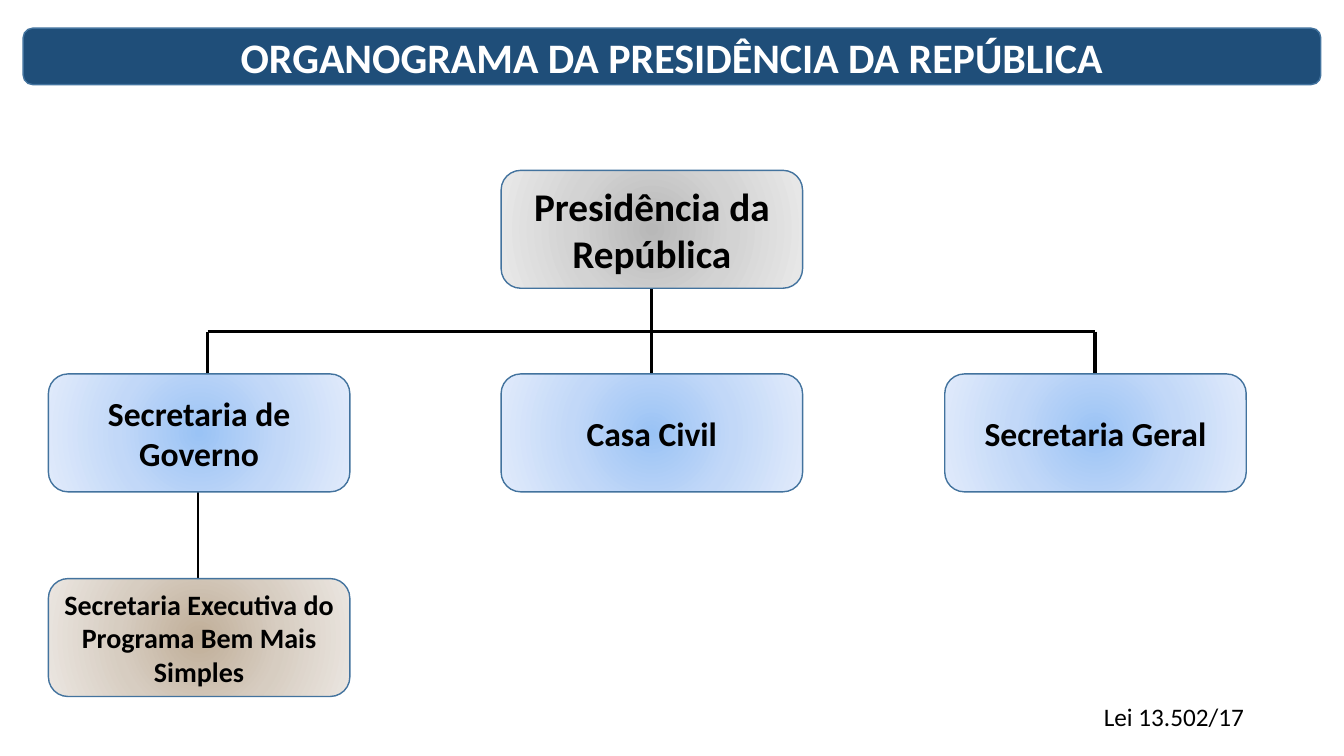
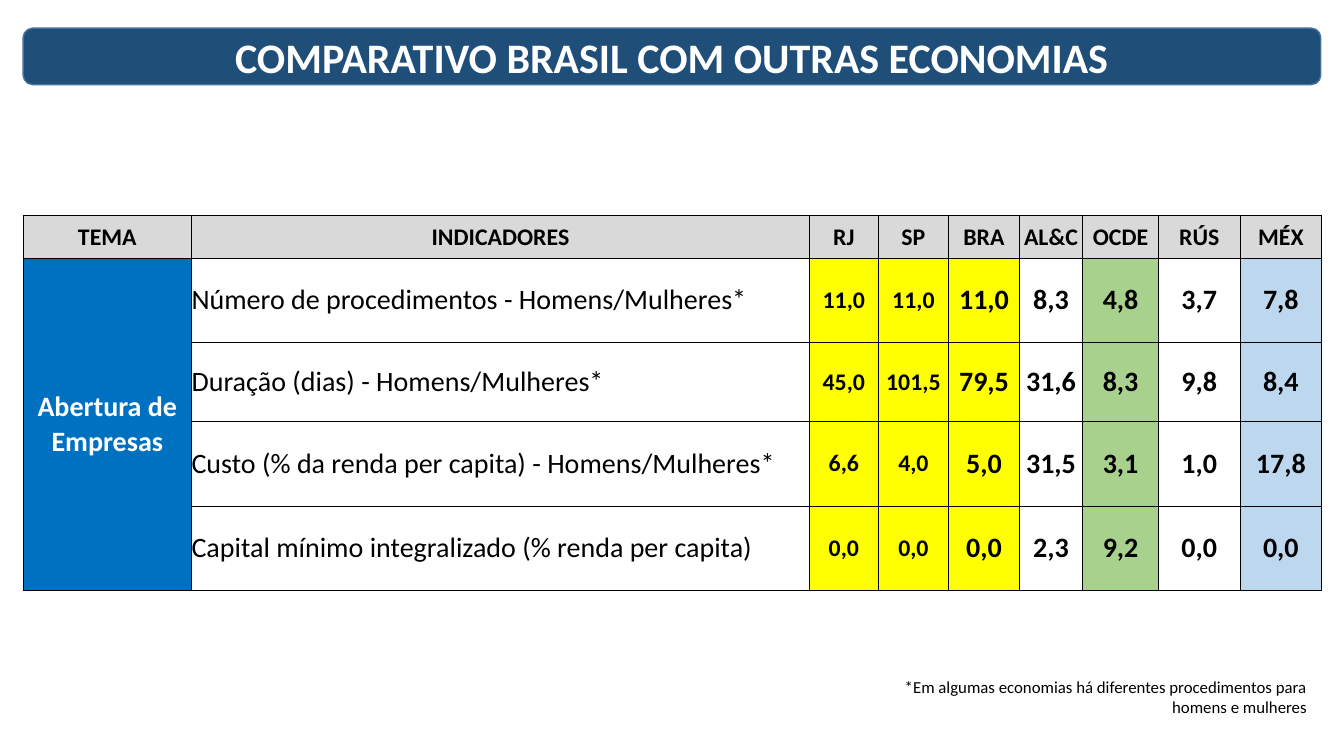
from dataclasses import dataclass

from pptx import Presentation
from pptx.dml.color import RGBColor
from pptx.enum.shapes import MSO_CONNECTOR, MSO_SHAPE
from pptx.enum.text import MSO_ANCHOR, MSO_AUTO_SIZE, PP_ALIGN
from pptx.oxml import parse_xml
from pptx.oxml.ns import nsdecls, qn
from pptx.util import Inches, Pt

ROUND_RECT = MSO_SHAPE.ROUNDED_RECTANGLE
STRAIGHT = MSO_CONNECTOR.STRAIGHT
MIDDLE = MSO_ANCHOR.MIDDLE
LEFT, CENTER, RIGHT = PP_ALIGN.LEFT, PP_ALIGN.CENTER, PP_ALIGN.RIGHT
TITLE_ONLY = 5


@dataclass(frozen=True)
class Theme:
    font: str = "Calibri"
    black: str = "000000"
    white: str = "FFFFFF"
    band: str = "1F4E79"
    outline: str = "43739E"
    header: str = "D9D9D9"
    topic: str = "0070C0"
    yellow: str = "FFFF00"
    green: str = "A9D18E"
    pale_blue: str = "BDD7EE"
    gray_glow: tuple[str, ...] = ("B8B8B8", "D3D3D3", "E9E9E9")
    blue_glow: tuple[str, ...] = ("9AC3F5", "C2D8F8", "E1EBFB")
    brown_glow: tuple[str, ...] = ("C0AE98", "D7CDC1", "EBE6E1")
    title: int = 30
    root: int = 28
    office: int = 24
    unit: int = 20
    law: int = 18
    small_cell: int = 17
    cell: int = 20
    note: int = 12


T = Theme()
BAND = (0.23, 0.28, 12.87, 0.56)
BOX_W, BOX_H = 2.99, 1.17


@dataclass(frozen=True)
class Node:
    text: str
    x: float
    y: float
    size: int
    glow: tuple[str, ...]


@dataclass(frozen=True)
class Link:
    x1: float
    y1: float
    x2: float
    y2: float
    width: float = 2.25


@dataclass(frozen=True)
class Column:
    head: str
    width: float
    size: int = T.cell
    fill: str | None = None
    bold: bool = True
    align: PP_ALIGN = CENTER


ROOT_Y, OFFICE_Y, UNIT_Y, BUS_Y = 1.69, 3.71, 5.74, 3.29
LEFT_X, MID_X, RIGHT_X = 0.48, 4.97, 9.37
LEFT_DROP, MID_DROP, RIGHT_DROP = 2.06, 6.46, 10.86

NODES = [
    Node("Presidência da República", MID_X, ROOT_Y, T.root, T.gray_glow),
    Node("Secretaria de Governo", LEFT_X, OFFICE_Y, T.office, T.blue_glow),
    Node("Casa Civil", MID_X, OFFICE_Y, T.office, T.blue_glow),
    Node("Secretaria Geral", RIGHT_X, OFFICE_Y, T.office, T.blue_glow),
    Node("Secretaria Executiva do Programa Bem Mais Simples",
         LEFT_X, UNIT_Y, T.unit, T.brown_glow),
]
LINKS = [
    Link(MID_DROP, ROOT_Y + BOX_H, MID_DROP, OFFICE_Y),
    Link(LEFT_DROP, BUS_Y, RIGHT_DROP, BUS_Y),
    Link(LEFT_DROP, BUS_Y, LEFT_DROP, OFFICE_Y),
    Link(RIGHT_DROP, BUS_Y, RIGHT_DROP, OFFICE_Y),
    Link(1.96, OFFICE_Y + BOX_H, 1.96, UNIT_Y, 1.5),
]

COLUMNS = [
    Column("TEMA", 1.67, fill=T.topic),
    Column("INDICADORES", 6.13, bold=False, align=LEFT),
    Column("RJ", 0.68, T.small_cell, T.yellow),
    Column("SP", 0.7, T.small_cell, T.yellow),
    Column("BRA", 0.7, fill=T.yellow),
    Column("AL&C", 0.63),
    Column("OCDE", 0.75, fill=T.green),
    Column("RÚS", 0.81),
    Column("MÉX", 0.81, fill=T.pale_blue),
]
ROW_HEIGHTS = [0.42, 0.84, 0.78, 0.84, 0.84]
TOPIC = "Abertura de Empresas"
ROWS = [
    ("Número de procedimentos - Homens/Mulheres*",
     "11,0", "11,0", "11,0", "8,3", "4,8", "3,7", "7,8"),
    ("Duração (dias) - Homens/Mulheres*",
     "45,0", "101,5", "79,5", "31,6", "8,3", "9,8", "8,4"),
    ("Custo (% da renda per capita) - Homens/Mulheres*",
     "6,6", "4,0", "5,0", "31,5", "3,1", "1,0", "17,8"),
    ("Capital mínimo integralizado (% renda per capita)",
     "0,0", "0,0", "0,0", "2,3", "9,2", "0,0", "0,0"),
]


def rgb(color: str) -> RGBColor:
    return RGBColor.from_string(color)


def write(tf, text: str, size: int, color: str = T.black,
          bold: bool = False, align: PP_ALIGN = CENTER) -> None:
    tf.text = text
    p = tf.paragraphs[0]
    p.alignment = align
    for r in p.runs:
        r.font.name = T.font
        r.font.size = Pt(size)
        r.font.bold = bold
        r.font.color.rgb = rgb(color)


def add_box(slide, x: float, y: float, w: float, h: float):
    """Add an outlined rounded rectangle, still without a fill."""
    sp = slide.shapes.add_shape(ROUND_RECT, Inches(x), Inches(y), Inches(w), Inches(h))
    sp.shadow.inherit = False
    sp.fill.background()
    sp.line.color.rgb = rgb(T.outline)
    sp.line.width = Pt(1)
    return sp


def fill_glow(sp, colors: tuple[str, ...]) -> None:
    """Fill a shape with a gradient that spreads from its centre."""
    step = 100000 // (len(colors) - 1)
    stops = "".join(f'<a:gs pos="{i * step}"><a:srgbClr val="{c}"/></a:gs>'
                    for i, c in enumerate(colors))
    grad = parse_xml(
        f'<a:gradFill {nsdecls("a")}><a:gsLst>{stops}</a:gsLst><a:path path="circle">'
        '<a:fillToRect l="50000" t="50000" r="50000" b="50000"/></a:path></a:gradFill>')
    spPr = sp._element.spPr
    spPr.replace(spPr.find(qn("a:noFill")), grad)


def add_node(slide, node: Node) -> None:
    sp = add_box(slide, node.x, node.y, BOX_W, BOX_H)
    fill_glow(sp, node.glow)
    sp.text_frame.vertical_anchor = MIDDLE
    write(sp.text_frame, node.text, node.size, bold=True)


def add_link(slide, link: Link) -> None:
    line = slide.shapes.add_connector(
        STRAIGHT, Inches(link.x1), Inches(link.y1), Inches(link.x2), Inches(link.y2))
    line.line.color.rgb = rgb(T.black)
    line.line.width = Pt(link.width)
    line._element.spPr.append(parse_xml(f'<a:effectLst {nsdecls("a")}/>'))


def add_note(slide, text: str, x: float, y: float, w: float, h: float,
             size: int, align: PP_ALIGN) -> None:
    tf = slide.shapes.add_textbox(Inches(x), Inches(y), Inches(w), Inches(h)).text_frame
    tf.word_wrap = True
    tf.auto_size = MSO_AUTO_SIZE.SHAPE_TO_FIT_TEXT
    write(tf, text, size, align=align)


def add_titled_slide(prs, title: str):
    """Add a slide whose title stands on the dark band."""
    slide = prs.slides.add_slide(prs.slide_layouts[TITLE_ONLY])
    band = add_box(slide, *BAND)
    band.fill.solid()
    band.fill.fore_color.rgb = rgb(T.band)
    sp = slide.shapes.title
    sp.left, sp.top, sp.width, sp.height = map(Inches, BAND)
    slide.shapes._spTree.append(sp._element)
    tf = sp.text_frame
    tf.auto_size = MSO_AUTO_SIZE.NONE
    tf.vertical_anchor = MIDDLE
    write(tf, title, T.title, T.white, bold=True)
    return slide


def style_cell(cell, fill: str | None) -> None:
    """Set the borders, insets and fill of a table cell."""
    cell.margin_left = cell.margin_right = cell.margin_top = cell.margin_bottom = 0
    cell.vertical_anchor = MIDDLE
    tcPr = cell._tc.get_or_add_tcPr()
    for side in "LRTB":
        tcPr.append(parse_xml(
            f'<a:ln{side} {nsdecls("a")} w="{Pt(0.5)}"><a:solidFill>'
            f'<a:srgbClr val="{T.black}"/></a:solidFill></a:ln{side}>'))
    if fill:
        cell.fill.solid()
        cell.fill.fore_color.rgb = rgb(fill)
    else:
        cell.fill.background()


def add_comparison(slide, x: float, y: float) -> None:
    widths = [c.width for c in COLUMNS]
    table = slide.shapes.add_table(
        len(ROW_HEIGHTS), len(COLUMNS), Inches(x), Inches(y),
        Inches(sum(widths)), Inches(sum(ROW_HEIGHTS))).table
    table.first_row = table.horz_banding = False
    for row, height in zip(table.rows, ROW_HEIGHTS):
        row.height = Inches(height)
    for j, col in enumerate(COLUMNS):
        table.columns[j].width = Inches(col.width)
        head = table.cell(0, j)
        style_cell(head, T.header)
        write(head.text_frame, col.head, T.small_cell, bold=True)
        for i, values in enumerate(ROWS, start=1):
            cell = table.cell(i, j)
            style_cell(cell, col.fill)
            if j:
                write(cell.text_frame, values[j - 1], col.size,
                      bold=col.bold, align=col.align)
    topic = table.cell(1, 0)
    topic.merge(table.cell(len(ROWS), 0))
    write(topic.text_frame, TOPIC, T.cell, T.white, bold=True)


def main() -> None:
    prs = Presentation()
    prs.slide_width, prs.slide_height = Inches(13.33), Inches(7.5)

    slide = add_titled_slide(prs, "ORGANOGRAMA DA PRESIDÊNCIA DA REPÚBLICA")
    for link in LINKS:
        add_link(slide, link)
    for node in NODES:
        add_node(slide, node)
    add_note(slide, "Lei 13.502/17", 10.85, 6.91, 1.68, 0.4, T.law, LEFT)

    slide = add_titled_slide(prs, "COMPARATIVO BRASIL COM OUTRAS ECONOMIAS")
    add_comparison(slide, 0.23, 2.14)
    add_note(slide, "*Em algumas economias há diferentes procedimentos para homens e mulheres",
             8.39, 6.66, 4.67, 0.5, T.note, RIGHT)

    prs.save("out.pptx")


if __name__ == "__main__":
    main()
